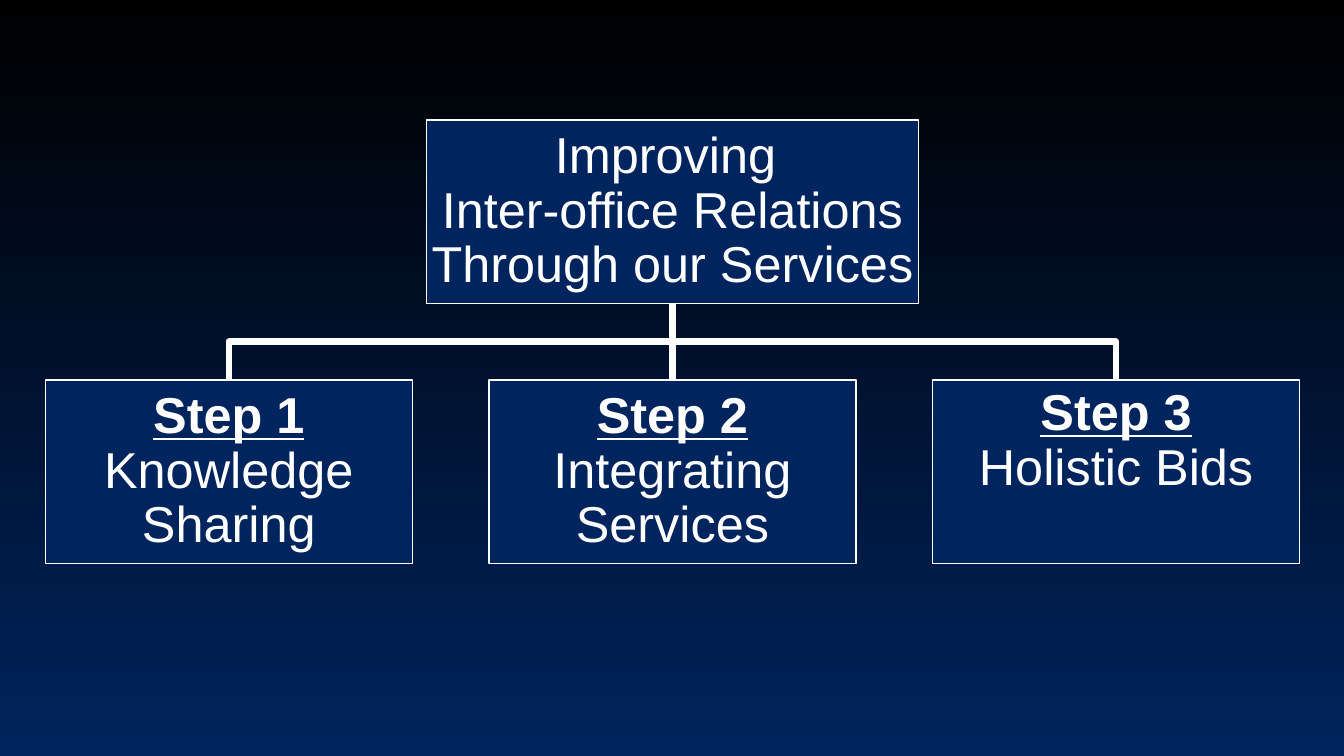
from pptx import Presentation
from pptx.dml.color import RGBColor
from pptx.enum.shapes import MSO_CONNECTOR as Conn, MSO_SHAPE as Shape
from pptx.enum.text import MSO_ANCHOR as Anchor, PP_ALIGN as Align
from pptx.oxml.ns import qn
from pptx.util import Inches, Pt
from lxml.etree import SubElement

GOAL = ["Improving ", "Inter-office Relations Through our Services"]
STEPS = [
    # heading, topic, extra room below the text
    ("Step 1", "Knowledge Sharing", 0),
    ("Step 2", "Integrating Services", 0),
    ("Step 3", "Holistic Bids", 0.6),
]

BLACK = RGBColor(0x00, 0x00, 0x00)
NAVY = RGBColor(0x00, 0x24, 0x5D)
WHITE = RGBColor(0xFF, 0xFF, 0xFF)

MID, PITCH = 6.67, 4.4
GOAL_W, STEP_W, HIGH = 4.88, 3.64, 1.82
GOAL_Y, STEP_Y = 1.19, 3.77
GOAL_END = GOAL_Y + HIGH
BEND = (GOAL_END + STEP_Y) / 2
PAD = 0.03
PLAIN = {"size": Pt(36), "name": "Arial", "bold": False, "underline": False}
HEAD = {**PLAIN, "bold": True, "underline": True}

deck = Presentation()
deck.slide_width, deck.slide_height = Inches(13.33), Inches(7.5)
slide = deck.slides.add_slide(deck.slide_layouts[6])

# Background gradient, black at the top
back = slide.background.fill
back.gradient()
back.gradient_angle = 270
for stop, color, place in zip(back.gradient_stops, (BLACK, NAVY), (0, 1)):
    stop.color.rgb, stop.position = color, place


def paint(line, width):
    line.color.rgb = WHITE
    line.width = Pt(width)


def add_box(mid, top, width, parts, room=0):
    box = slide.shapes.add_shape(Shape.RECTANGLE, Inches(mid - width / 2),
                                 Inches(top), Inches(width), Inches(HIGH))
    box.shadow.inherit = False
    box.fill.solid()
    box.fill.fore_color.rgb = NAVY
    paint(box.line, 1)
    frame = box.text_frame
    frame.word_wrap = True
    frame.vertical_anchor = Anchor.MIDDLE
    for side in ("left", "right", "top", "bottom"):
        extra = room if side == "bottom" else 0
        setattr(frame, "margin_" + side, Inches(PAD + extra))
    para = frame.paragraphs[0]
    para.alignment = Align.CENTER
    para.line_spacing = 0.9
    for index, (words, style) in enumerate(parts):
        if index:
            para.add_line_break()
        run = para.add_run()
        run.text = words
        run.font.color.rgb = WHITE
        for key, value in style.items():
            setattr(run.font, key, value)
    return box


def add_bend(mid):
    path = slide.shapes.build_freeform(Inches(MID), Inches(GOAL_END))
    turns = [(MID, BEND), (mid, BEND), (mid, STEP_Y)]
    path.add_line_segments([(Inches(x), Inches(y)) for x, y in turns],
                           close=False)
    bend = path.convert_to_shape()
    bend.shadow.inherit = False
    bend.fill.background()
    paint(bend.line, 4.5)


# Branches to the outer steps lie behind the boxes
for mid in (MID + PITCH, MID - PITCH):
    add_bend(mid)

# Straight branch to the middle step
stem = slide.shapes.add_connector(Conn.STRAIGHT, Inches(MID), Inches(GOAL_END),
                                  Inches(MID), Inches(STEP_Y))
SubElement(stem.element.spPr, qn("a:effectLst"))
paint(stem.line, 4.5)

# Goal and steps
goal = add_box(MID, GOAL_Y, GOAL_W, [(words, PLAIN) for words in GOAL])
boxes = [
    add_box(MID + (index - 1) * PITCH, STEP_Y, STEP_W,
            [(head, HEAD), (topic, PLAIN)], room)
    for index, (head, topic, room) in enumerate(STEPS)
]
stem.begin_connect(goal, 2)
stem.end_connect(boxes[1], 0)

deck.save("out.pptx")
